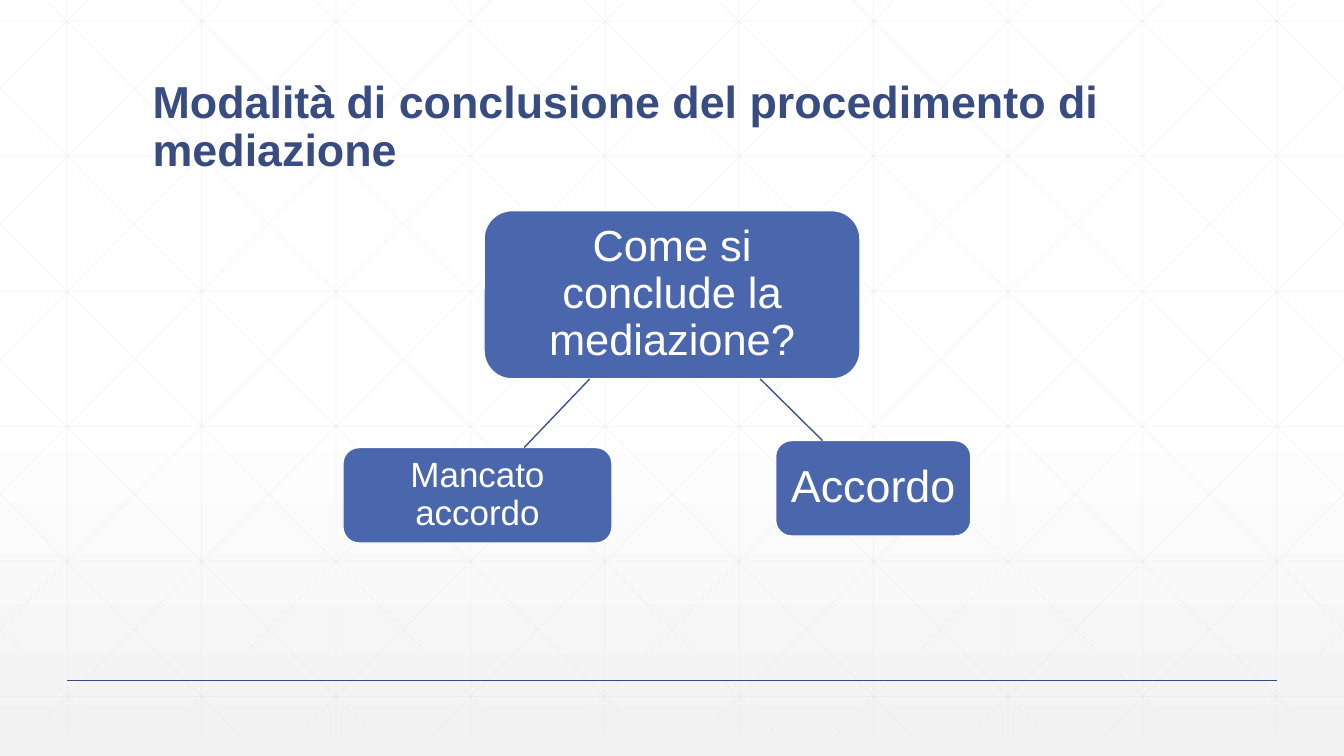
from lxml.etree import SubElement
from pptx import Presentation
from pptx.dml.color import RGBColor
from pptx.enum.shapes import MSO_CONNECTOR, MSO_SHAPE
from pptx.enum.text import MSO_ANCHOR, PP_ALIGN
from pptx.oxml.ns import qn
from pptx.util import Pt

WIDTH, HEIGHT = 960, 540


def color(value):
    return RGBColor.from_string(value)


def add_line(page, start, end, stroke, weight, opacity=100):
    line = page.shapes.add_connector(
        MSO_CONNECTOR.STRAIGHT, *(Pt(value) for value in (*start, *end)))
    line.line.color.rgb = color(stroke)
    line.line.width = Pt(weight)
    properties = line._element.spPr
    SubElement(properties, qn("a:effectLst"))
    if opacity < 100:
        tone = properties.find(".//" + qn("a:srgbClr"))
        SubElement(tone, qn("a:alpha"), val=str(opacity * 1000))


def write(frame, text, size, ink, anchor, align, bold=False):
    frame.word_wrap = True
    frame.vertical_anchor = anchor
    para = frame.paragraphs[0]
    para.text = text
    para.alignment = align
    para.line_spacing = 0.9
    para.font.name = "Arial"
    para.font.size = Pt(size)
    para.font.bold = bold
    para.font.color.rgb = color(ink)


def paint_background(page):
    fill = page.background.fill
    fill.gradient()
    fill.gradient_angle = 270
    stops = ((0.53, "FFFFFF"), (1, "F2F2F2"))
    for stop, (position, shade) in zip(fill.gradient_stops, stops):
        stop.position = position
        stop.color.rgb = color(shade)


def draw_lattice(page, left, top, width, height):
    right, bottom = left + width, top + height
    step, slope, rise = 96, 1.0056, 15

    def draw(start, end):
        add_line(page, start, end, "D9D9D9", 0.5, 25)

    for column in range(10):
        x = left + 48 + column * step
        draw((x, top), (x, bottom))
    for row in range(6):
        y = top + 15 + row * 96.5
        draw((left, y), (right, y))
    for index in range(-5, 10):
        origin = 18 + index * step
        first = max(0, -origin * slope - rise)
        last = min(height, (width - origin) * slope - rise)
        near, far = (origin + (y + rise) / slope for y in (first, last))
        draw((left + near, top + first), (left + far, top + last))
        draw((right - near, top + first), (right - far, top + last))


def draw_title(page, left, top, width, height):
    box = page.shapes.add_textbox(Pt(left), Pt(top), Pt(width), Pt(height))
    write(box.text_frame, "Modalità di conclusione del procedimento di mediazione",
          32, "384C81", MSO_ANCHOR.BOTTOM, PP_ALIGN.LEFT, bold=True)


def draw_node(page, left, top, width, height, text, size, inset):
    node = page.shapes.add_shape(
        MSO_SHAPE.ROUNDED_RECTANGLE, Pt(left), Pt(top), Pt(width), Pt(height))
    node.shadow.inherit = False
    node.fill.solid()
    node.fill.fore_color.rgb = color("4A66AC")
    node.line.color.rgb = color("FFFFFF")
    node.line.width = Pt(1)
    frame = node.text_frame
    frame.margin_left = frame.margin_right = Pt(inset)
    frame.margin_top = frame.margin_bottom = Pt(inset)
    write(frame, text, size, "FFFFFF", MSO_ANCHOR.MIDDLE, PP_ALIGN.CENTER)


def draw_outcomes(page, left, top):
    nodes = (
        (100.8, 0, 268.5, 120.2, "Come si conclude la mediazione?", 31, 6.2),
        (0, 169.2, 192.2, 68.2, "Mancato accordo", 25, 5),
        (309, 164.2, 139.5, 68.2, "Accordo", 32, 6.2),
    )
    branches = (((176.2, 120.2), (129.4, 169.2)), ((298, 120.2), (342.5, 164.2)))
    for x, y, *details in nodes:
        draw_node(page, left + x, top + y, *details)
    for branch in branches:
        start, end = ((left + x, top + y) for x, y in branch)
        add_line(page, start, end, "3B528A", 1)


def main():
    deck = Presentation()
    deck.slide_width, deck.slide_height = Pt(WIDTH), Pt(HEIGHT)
    page = deck.slides.add_slide(deck.slide_layouts[6])
    paint_background(page)
    draw_lattice(page, 0, 0, WIDTH, 525)
    add_line(page, (48, 486), (WIDTH - 48, 486), "384C81", 1)
    draw_title(page, 102, 39.6, 756, 90)
    draw_outcomes(page, 245, 150.5)
    deck.save("out.pptx")


if __name__ == "__main__":
    main()
